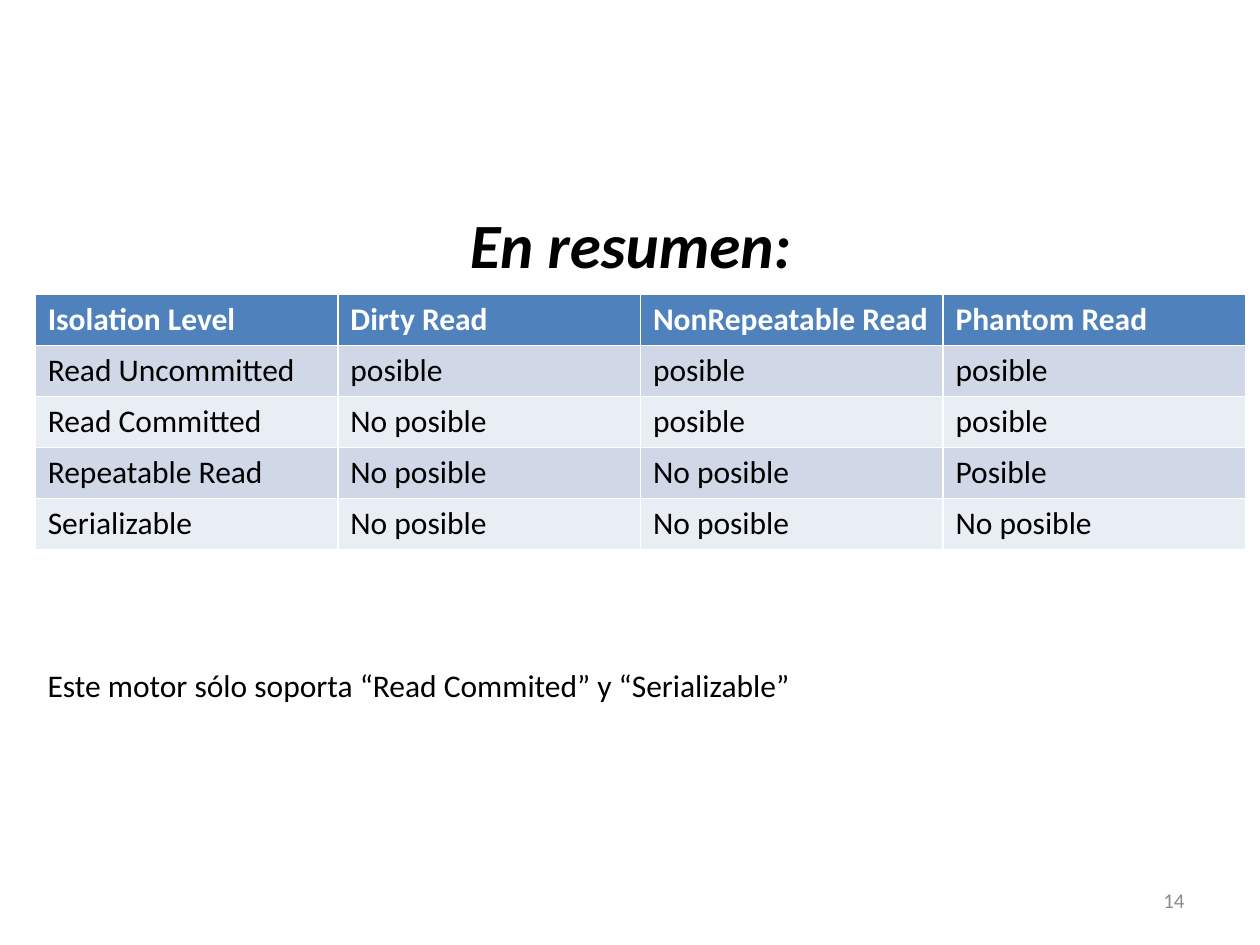
"""Build the summary slide of transaction isolation levels."""
import pptx
import pptx.dml.color
import pptx.enum.text
import pptx.util

Cm = pptx.util.Cm
Pt = pptx.util.Pt
ALIGN = pptx.enum.text.PP_ALIGN

TITLE = "En resumen:"
NOTE = "Este motor sólo soporta “Read Commited” y “Serializable”"
PAGE_NUMBER = "14"
LEVELS = [
    ("Isolation Level", "Dirty Read", "NonRepeatable Read", "Phantom Read"),
    ("Read Uncommitted", "posible", "posible", "posible"),
    ("Read Committed", "No posible", "posible", "posible"),
    ("Repeatable Read", "No posible", "No posible", "Posible"),
    ("Serializable", "No posible", "No posible", "No posible"),
]
COLORS = {
    "text": "000000",
    "number": "8C8C8C",
    "header_text": "FFFFFF",
    "header": "4F81BD",
    "odd_band": "D0D8E8",
    "even_band": "E9EDF4",
}
LEFT = Cm(0.71)
COLUMN_WIDTH = Cm(6.1)
ROW_HEIGHT = Cm(1.03)


def color(name):
    return pptx.dml.color.RGBColor.from_string(COLORS[name])


def write(para, text, size, color_name, bold=False, italic=False):
    para.text = text
    for span in para.runs:
        span.font.name = "Calibri"
        span.font.size = Pt(size)
        span.font.bold = bold
        span.font.italic = italic
        span.font.color.rgb = color(color_name)


def add_box(page, left, top, width, height):
    frame = page.shapes.add_textbox(left, top, width, height).text_frame
    frame.word_wrap = True
    return frame


def add_summary(page):
    frame = add_box(page, LEFT, Cm(4.01), Cm(24), Cm(10.26))
    title = frame.paragraphs[0]
    title.alignment = ALIGN.CENTER
    write(title, TITLE, 36, "text", bold=True, italic=True)
    note = frame.add_paragraph()
    note.space_before = Pt(220)
    write(note, NOTE, 18, "text")


def add_levels(page):
    row_count, column_count = len(LEVELS), len(LEVELS[0])
    table = page.shapes.add_table(
        row_count, column_count, LEFT, Cm(5.93),
        COLUMN_WIDTH * column_count, ROW_HEIGHT * row_count,
    ).table
    for column in table.columns:
        column.width = COLUMN_WIDTH
    for row_index, values in enumerate(LEVELS):
        table.rows[row_index].height = ROW_HEIGHT
        is_header = row_index == 0
        band = "odd_band" if row_index % 2 else "even_band"
        for column_index, value in enumerate(values):
            cell = table.cell(row_index, column_index)
            cell.fill.solid()
            cell.fill.fore_color.rgb = color("header" if is_header else band)
            write(cell.text_frame.paragraphs[0], value, 18,
                  "header_text" if is_header else "text", bold=is_header)


def add_page_number(page):
    frame = add_box(page, Cm(18.2), Cm(17.65), Cm(5.93), Cm(1.01))
    frame.vertical_anchor = pptx.enum.text.MSO_ANCHOR.MIDDLE
    para = frame.paragraphs[0]
    para.alignment = ALIGN.RIGHT
    write(para, PAGE_NUMBER, 12, "number")


def main():
    deck = pptx.Presentation()
    deck.slide_width, deck.slide_height = Cm(25.4), Cm(19.05)
    page = deck.slides.add_slide(deck.slide_layouts[6])
    add_summary(page)
    add_levels(page)
    add_page_number(page)
    deck.save("out.pptx")


if __name__ == "__main__":
    main()
